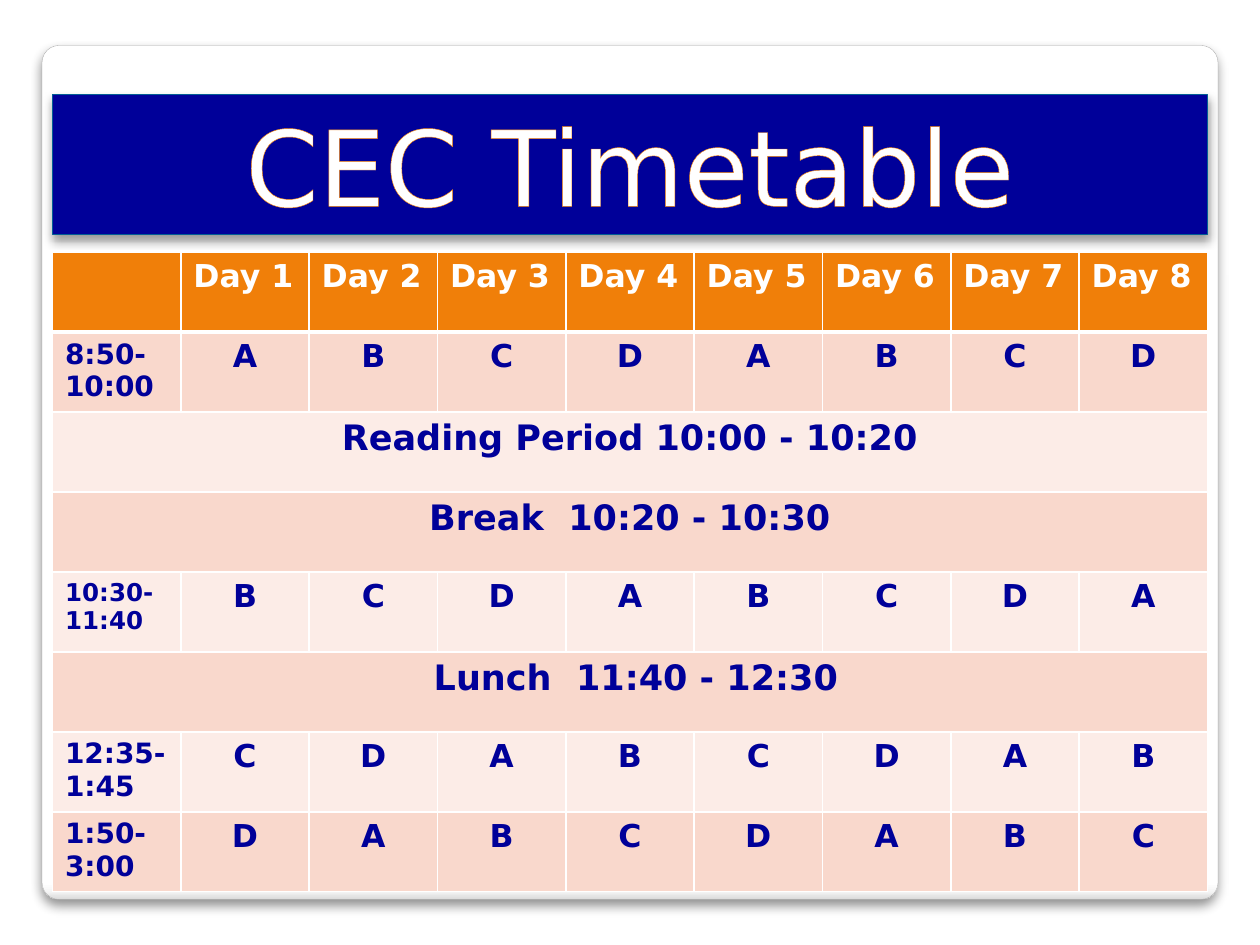
from lxml import etree
from pptx import Presentation
from pptx import util as u
from pptx.dml.color import RGBColor
from pptx.enum import shapes, text
from pptx.oxml import ns

WHITE = RGBColor(0xFF, 0xFF, 0xFF)
NAVY = RGBColor(0x00, 0x00, 0x99)
BLUE = RGBColor(0x03, 0x5E, 0x94)
ORANGE = RGBColor(0xF0, 0x7F, 0x09)
PEACH = RGBColor(0xF9, 0xD8, 0xCC)
CREAM = RGBColor(0xFC, 0xEC, 0xE7)
GREY = RGBColor(0xA4, 0xA4, 0xA4)
PALE_GREY = RGBColor(0xF7, 0xF7, 0xF7)
EDGE_GREY = RGBColor(0xDA, 0xDA, 0xDA)
BLACK = RGBColor(0x00, 0x00, 0x00)

LETTERS = "ABCD"
DAYS = 8
ROWS = [
    ("8:50-10:00", 16, 0),
    ("Reading Period 10:00 - 10:20", 20, None),
    ("Break  10:20 - 10:30", 20, None),
    ("10:30-11:40", 14, 1),
    (" Lunch  11:40 - 12:30", 20, None),
    ("12:35-1:45", 16, 2),
    ("1:50-3:00", 16, 3),
]


def add_color(parent, color, alpha=100):
    element = etree.SubElement(parent, ns.qn("a:srgbClr"), val=str(color))
    if alpha < 100:
        etree.SubElement(element, ns.qn("a:alpha"), val=str(alpha * 1000))


def make_line(tag, color, width):
    line = etree.Element(ns.qn(tag), w=str(u.Pt(width)))
    add_color(etree.SubElement(line, ns.qn("a:solidFill")), color)
    return line


class SlideBuilder:
    font = "DejaVu Sans"

    def __init__(self, slide):
        self.slide = slide

    def box(self, kind, frame, line_color, line_width, shadow):
        shape = self.slide.shapes.add_shape(kind, *map(u.Pt, frame))
        shape.line.color.rgb = line_color
        shape.line.width = u.Pt(line_width)
        shape.shadow.inherit = False
        alpha, blur, distance = shadow
        effects = shape.element.spPr.find(ns.qn("a:effectLst"))
        outer = etree.SubElement(
            effects, ns.qn("a:outerShdw"), blurRad=str(u.Pt(blur)),
            dist=str(u.Pt(distance)), dir="5400000", algn="t", rotWithShape="0")
        add_color(outer, BLACK, alpha)
        return shape

    def panel(self, frame, stops):
        shape = self.box(shapes.MSO_SHAPE.ROUNDED_RECTANGLE, frame, GREY, 0.16, (44, 6, 4))
        shape.adjustments[0] = 0.02
        shape.fill.gradient()
        shape.fill.gradient_angle = 270
        stop_list = shape.element.spPr.find(".//" + ns.qn("a:gsLst"))
        for stop in list(stop_list):
            stop_list.remove(stop)
        for position, color in stops:
            stop = etree.SubElement(stop_list, ns.qn("a:gs"), pos=str(position * 1000))
            add_color(stop, color)

    def banner(self, frame, wording):
        shape = self.box(shapes.MSO_SHAPE.RECTANGLE, frame, BLUE, 0.75, (40, 5.2, 3))
        shape.fill.solid()
        shape.fill.fore_color.rgb = NAVY
        shape.text_frame.text = wording
        shape.text_frame.word_wrap = True
        paragraph = shape.text_frame.paragraphs[0]
        self.format(paragraph, 60, WHITE, False, text.PP_ALIGN.CENTER)
        paragraph.runs[0].font._element.insert(0, make_line("a:ln", ORANGE, 3))

    def format(self, paragraph, size, color, bold, align):
        paragraph.alignment = align
        for run in paragraph.runs:
            run.font.name = self.font
            run.font.size = u.Pt(size)
            run.font.color.rgb = color
            run.font.bold = bold

    def cell(self, cell, wording, size, color, fill, align, bottom=1):
        cell.text_frame.text = wording
        self.format(cell.text_frame.paragraphs[0], size, color, True, align)
        cell.fill.solid()
        cell.fill.fore_color.rgb = fill
        properties = cell._tc.get_or_add_tcPr()
        sides = (("a:lnL", 1), ("a:lnR", 1), ("a:lnT", 1), ("a:lnB", bottom))
        for index, (tag, width) in enumerate(sides):
            properties.insert(index, make_line(tag, WHITE, width))

    def timetable(self, frame):
        left, center = text.PP_ALIGN.LEFT, text.PP_ALIGN.CENTER
        table = self.slide.shapes.add_table(
            len(ROWS) + 1, DAYS + 1, *map(u.Pt, frame)).table
        for day in range(DAYS + 1):
            heading = f"Day {day}" if day else ""
            self.cell(table.cell(0, day), heading, 18, WHITE, ORANGE, left, 3)
        for row, (label, size, start) in enumerate(ROWS, 1):
            fill = PEACH if row % 2 else CREAM
            spans = start is None
            self.cell(table.cell(row, 0), label, size, NAVY, fill, center if spans else left)
            for day in range(DAYS):
                letter = "" if spans else LETTERS[(start + day) % len(LETTERS)]
                self.cell(table.cell(row, day + 1), letter, 18, NAVY, fill, center)
            if spans:
                table.cell(row, 0).merge(table.cell(row, DAYS))


def main():
    presentation = Presentation()
    presentation.slide_width = u.Pt(720)
    presentation.slide_height = u.Pt(540)
    builder = SlideBuilder(presentation.slides.add_slide(presentation.slide_layouts[6]))
    builder.panel((24, 26, 672, 488),
                  [(0, WHITE), (98, WHITE), (99, PALE_GREY), (100, EDGE_GREY)])
    builder.banner((30, 54, 660, 80), "CEC Timetable")
    builder.timetable((30, 144, 660, 365.76))
    presentation.save("out.pptx")


if __name__ == "__main__":
    main()
